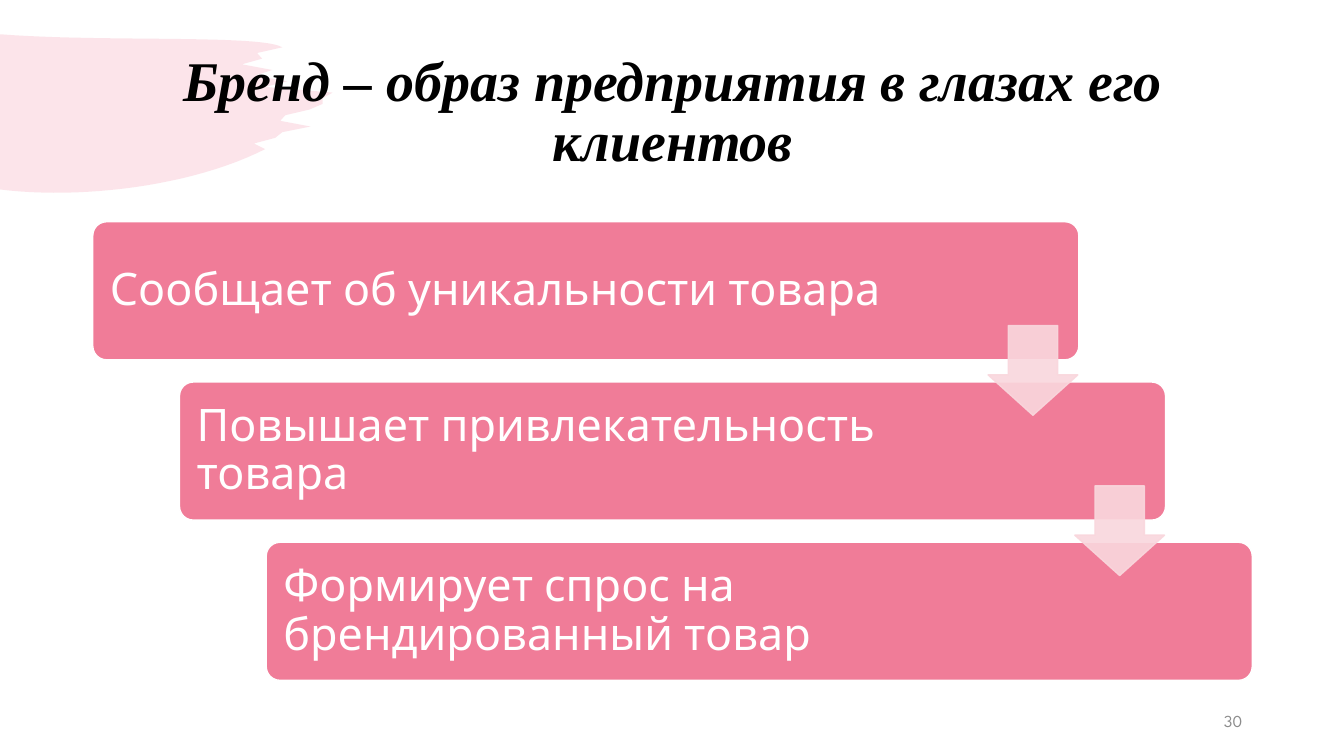
import dataclasses
import typing

import lxml.etree
import pptx
import pptx.dml.color
import pptx.enum.shapes
import pptx.enum.text
import pptx.oxml.ns
import pptx.util

Inches = pptx.util.Inches
MSO_SHAPE = pptx.enum.shapes.MSO_SHAPE
PP_ALIGN = pptx.enum.text.PP_ALIGN
Point = tuple[float, float]

COLORS = {
    "pink": "F07C98",
    "arrow": "F9D7DD",
    "white": "FFFFFF",
    "black": "000000",
    "gray": "8C8C8C",
}
BODY_FONT = "League Spartan"

MESSAGES = [
    "Сообщает об уникальности товара",
    "Повышает привлекательность товара",
    "Формирует спрос на брендированный товар",
]
STEP_X, STEP_Y = 0.86, 1.59


class Bristle(typing.NamedTuple):
    tip: float
    notch: float


BRISTLES = [
    Bristle(tip=2.8, notch=2.55),
    Bristle(tip=2.6, notch=2.4),
    Bristle(tip=2.7, notch=2.53),
    Bristle(tip=2.85, notch=2.63),
    Bristle(tip=3.3, notch=3.2),
    Bristle(tip=3.2, notch=3.07),
    Bristle(tip=2.83, notch=2.78),
    Bristle(tip=3.08, notch=2.8),
    Bristle(tip=2.73, notch=2.52),
]


@dataclasses.dataclass
class Block:
    kind: MSO_SHAPE
    left: float
    top: float
    width: float
    height: float
    color: str
    line: str
    adjustments: tuple[float, ...]
    alpha: int = 100
    text: str = ""

    def stepped(self, i: int, text: str = "") -> "Block":
        return dataclasses.replace(
            self, left=self.left + i * STEP_X, top=self.top + i * STEP_Y, text=text)


FIRST_STEP = Block(MSO_SHAPE.ROUNDED_RECTANGLE, 0.92, 2.2, 9.78, 1.37,
                   color="pink", line="white", adjustments=(0.1,))
FIRST_ARROW = Block(MSO_SHAPE.DOWN_ARROW, 9.8, 3.23, 0.89, 0.89,
                    color="arrow", line="arrow", adjustments=(0.55, 0.45), alpha=90)


def rgb(name: str) -> pptx.dml.color.RGBColor:
    return pptx.dml.color.RGBColor.from_string(COLORS[name])


def paint(s, fill: str, line: str | None = None, alpha: int = 100) -> None:
    s.shadow.inherit = False
    s.fill.solid()
    s.fill.fore_color.rgb = rgb(fill)
    if line:
        s.line.color.rgb = rgb(line)
        s.line.width = pptx.util.Pt(1)
    else:
        s.line.fill.background()
    if alpha < 100:
        qn = pptx.oxml.ns.qn
        for color in s._element.spPr.iter(qn("a:srgbClr")):
            lxml.etree.SubElement(color, qn("a:alpha"), val=str(alpha * 1000))


def write(tf, text: str, *, size: float, color: str, font: str = BODY_FONT,
          bold: bool = False, italic: bool = False,
          align=PP_ALIGN.LEFT, spacing: float = 0.9) -> None:
    tf.word_wrap = True
    tf.vertical_anchor = pptx.enum.text.MSO_ANCHOR.MIDDLE
    p = tf.paragraphs[0]
    p.alignment = align
    p.line_spacing = spacing
    r = p.add_run()
    r.text = text
    r.font.name = font
    r.font.size = pptx.util.Pt(size)
    r.font.bold = bold
    r.font.italic = italic
    r.font.color.rgb = rgb(color)


def curve(start: Point, pull_1: Point, pull_2: Point, end: Point,
          pieces: int = 24) -> list[Point]:
    points = []
    for i in range(pieces + 1):
        t = i / pieces
        weights = ((1 - t) ** 3, 3 * t * (1 - t) ** 2, 3 * t * t * (1 - t), t ** 3)
        corners = (start, pull_1, pull_2, end)
        points.append((sum(w * x for w, (x, _) in zip(weights, corners)),
                       sum(w * y for w, (_, y) in zip(weights, corners))))
    return points


def ragged_edge(top: float, bottom: float) -> list[Point]:
    gap = (bottom - top) / len(BRISTLES)
    points = []
    for i, bristle in enumerate(BRISTLES):
        y = top + i * gap
        points += [(bristle.tip, y), (bristle.notch, y + gap / 2)]
    return points


def add_brush(slide) -> None:
    top, bottom = 0.47, 1.48
    upper_edge = curve((0, 0.34), (1, 0.42), (2.6, 0.34), (BRISTLES[0].tip, top))
    lower_edge = curve((2.63, bottom), (1.9, 1.85), (0.8, 1.98), (0, 1.88))
    outline = upper_edge + ragged_edge(top, bottom) + lower_edge
    points = [(Inches(x), Inches(y)) for x, y in outline]
    builder = slide.shapes.build_freeform(*points[0])
    builder.add_line_segments(points[1:], close=True)
    s = builder.convert_to_shape()
    paint(s, "pink", alpha=20)
    slide.shapes._spTree.insert(2, s._element)


def add_title(slide) -> None:
    title = slide.shapes.title
    title.left, title.top = Inches(0.92), Inches(0.4)
    title.width, title.height = Inches(11.5), Inches(1.45)
    write(title.text_frame, "Бренд – образ предприятия в глазах его клиентов",
          size=40, color="black", font="Times New Roman",
          bold=True, italic=True, align=PP_ALIGN.CENTER)


def add_block(slide, block: Block) -> None:
    s = slide.shapes.add_shape(
        block.kind, Inches(block.left), Inches(block.top),
        Inches(block.width), Inches(block.height))
    for i, value in enumerate(block.adjustments):
        s.adjustments[i] = value
    paint(s, block.color, block.line, block.alpha)
    if block.text:
        tf = s.text_frame
        tf.margin_left = tf.margin_top = tf.margin_bottom = Inches(0.13)
        tf.margin_right = Inches(1.53)
        write(tf, block.text, size=32, color="white")


def add_page_number(slide) -> None:
    s = slide.shapes.add_textbox(Inches(9.42), Inches(6.95), Inches(3), Inches(0.4))
    write(s.text_frame, "30", size=12, color="gray",
          align=PP_ALIGN.RIGHT, spacing=1.0)


def main() -> None:
    prs = pptx.Presentation()
    prs.slide_width = Inches(13.33)
    prs.slide_height = Inches(7.5)
    slide = prs.slides.add_slide(prs.slide_layouts[5])
    add_brush(slide)
    add_title(slide)
    for i, message in enumerate(MESSAGES):
        add_block(slide, FIRST_STEP.stepped(i, message))
    for i in range(len(MESSAGES) - 1):
        add_block(slide, FIRST_ARROW.stepped(i))
    add_page_number(slide)
    prs.save("out.pptx")


if __name__ == "__main__":
    main()
